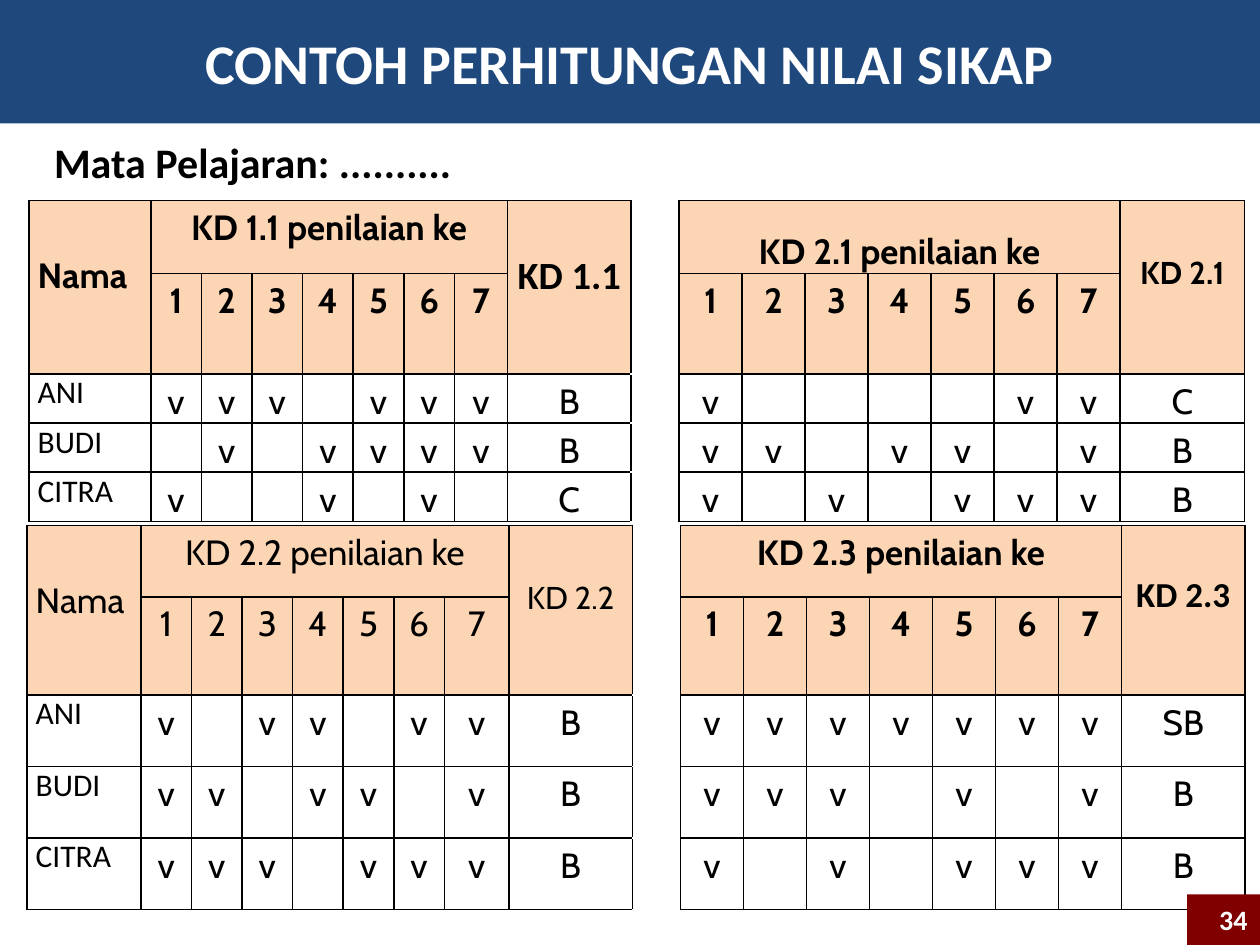
import dataclasses

import lxml.etree
import pptx
import pptx.dml.color
import pptx.enum.shapes
import pptx.enum.text
import pptx.oxml.ns
import pptx.util

Cm, Pt = pptx.util.Cm, pptx.util.Pt
ALIGN = pptx.enum.text.PP_ALIGN
MIDDLE = pptx.enum.text.MSO_ANCHOR.MIDDLE


@dataclasses.dataclass(frozen=True)
class Theme:
    banner: str = "1F497D"
    header: str = "FCD5B5"
    badge: str = "800000"
    ink: str = "000000"
    paper: str = "FFFFFF"
    sans: str = "Calibri"
    table_font: str = "Cabin"
    title: int = 32
    subtitle: int = 24
    large: int = 22
    body: int = 20
    name: int = 18
    page: int = 16


@dataclasses.dataclass
class Block:
    """One half of a table: headings, their styling, and a row per pupil."""
    code: str
    rows: list
    bold: bool = True
    heading_drop: float = 0
    code_drop: float = 0.97
    code_size: int = 18
    code_font: str = "Cabin"


def rgb(value):
    return pptx.dml.color.RGBColor.from_string(value)


class SlideBuilder:
    def __init__(self, slide, theme):
        self.s = slide
        self.theme = theme

    def add_run(self, tf, text, size, font=None, color=None, bold=False,
                align=ALIGN.LEFT, spacing=None):
        p = tf.paragraphs[0]
        p.alignment = align
        if spacing:
            p.line_spacing = spacing
        r = p.add_run()
        r.text = text
        r.font.size = Pt(size)
        r.font.name = font or self.theme.sans
        r.font.bold = bold
        r.font.color.rgb = rgb(color or self.theme.ink)

    def title(self, text, width, height):
        sp = self.s.shapes.title
        sp.left, sp.top, sp.width, sp.height = 0, 0, width, height
        sp.fill.solid()
        sp.fill.fore_color.rgb = rgb(self.theme.banner)
        sp.text_frame.vertical_anchor = MIDDLE
        self.add_run(sp.text_frame, text, self.theme.title,
                     color=self.theme.paper, bold=True, align=ALIGN.CENTER)

    def text(self, text, left, top, width, height):
        tf = self.s.shapes.add_textbox(left, top, width, height).text_frame
        tf.word_wrap = True
        self.add_run(tf, text, self.theme.subtitle, bold=True)

    def badge(self, text, left, top, width, height):
        sp = self.s.shapes.add_shape(
            pptx.enum.shapes.MSO_SHAPE.RECTANGLE, left, top, width, height)
        sp.shadow.inherit = False
        sp.fill.solid()
        sp.fill.fore_color.rgb = rgb(self.theme.badge)
        sp.line.fill.background()
        sp.text_frame.vertical_anchor = MIDDLE
        self.add_run(sp.text_frame, text, self.theme.page,
                     color=self.theme.paper, bold=True, align=ALIGN.RIGHT)

    def borders(self, cell, horizontal):
        tc_pr = cell._tc.get_or_add_tcPr()
        qn = pptx.oxml.ns.qn
        for side in "LRTB":
            ln = lxml.etree.SubElement(tc_pr, qn(f"a:ln{side}"), w=str(Pt(1)))
            fill = lxml.etree.SubElement(ln, qn("a:solidFill"))
            color = horizontal if side in "TB" else self.theme.ink
            lxml.etree.SubElement(fill, qn("a:srgbClr"), val=color)

    def cell(self, cell, text, size=None, font=None, bold=False,
             align=ALIGN.CENTER, spacing=1.15, drop=0):
        cell.margin_top = Cm(drop)
        self.add_run(cell.text_frame, text, size or self.theme.body,
                     font or self.theme.table_font, bold=bold, align=align,
                     spacing=spacing)

    def block(self, table, col, block):
        """Fill seven assessment columns and the result column from col."""
        result = col + 7
        table.cell(0, col).merge(table.cell(0, result - 1))
        table.cell(0, result).merge(table.cell(1, result))
        self.cell(table.cell(0, col), f"{block.code} penilaian ke",
                  bold=block.bold, drop=block.heading_drop)
        self.cell(table.cell(0, result), block.code, block.code_size,
                  block.code_font, block.bold, drop=block.code_drop)
        for i in range(7):
            self.cell(table.cell(1, col + i), str(i + 1), bold=block.bold)
        for row, (marks, grade) in enumerate(block.rows, 2):
            for i, mark in enumerate(marks):
                if mark == "v":
                    self.cell(table.cell(row, col + i), mark)
            self.cell(table.cell(row, result), grade)

    def score_table(self, left, top, cols, rows, names, first, second):
        gap = 9
        table = self.s.shapes.add_table(
            len(rows), len(cols), Cm(left), Cm(top),
            Cm(sum(cols)), Cm(sum(rows))).table
        table.first_row = table.horz_banding = False
        for column, width in zip(table.columns, cols):
            column.width = Cm(width)
        for row, height in zip(table.rows, rows):
            row.height = Cm(height)

        # Grid lines, fills and insets
        for r in range(len(rows)):
            for c in range(len(cols)):
                cell = table.cell(r, c)
                self.borders(cell, self.theme.paper if c == gap else self.theme.ink)
                cell.margin_left = cell.margin_right = Cm(0.18)
                cell.margin_top = cell.margin_bottom = 0
                if r < 2 and c != gap:
                    cell.fill.solid()
                    cell.fill.fore_color.rgb = rgb(self.theme.header)
                else:
                    cell.fill.background()

        # Name column, then the two blocks on either side of the gap
        for c in (0, gap):
            table.cell(0, c).merge(table.cell(1, c))
        self.cell(table.cell(0, 0), "Nama", bold=first.bold,
                  align=ALIGN.JUSTIFY, drop=0.97)
        for r, name in enumerate(names, 2):
            self.cell(table.cell(r, 0), name, self.theme.name, self.theme.sans,
                      align=ALIGN.LEFT, spacing=None)
        self.block(table, 1, first)
        self.block(table, gap + 1, second)


def main():
    theme = Theme()
    prs = pptx.Presentation()
    prs.slide_width, prs.slide_height = Cm(25.4), Cm(19.05)
    b = SlideBuilder(prs.slides.add_slide(prs.slide_layouts[5]), theme)
    names = ["ANI", "BUDI", "CITRA"]
    right_cols = [2.49, 0.97] + [1.27] * 7

    # Heading
    b.title("CONTOH PERHITUNGAN NILAI SIKAP", prs.slide_width, Cm(2.49))

    # Upper table
    b.score_table(
        0.58, 4.04, [2.46] + [1.02] * 6 + [1.07] + right_cols + [2.51],
        [1.47, 2.03] + [0.99] * 3, names,
        Block("KD 1.1", [("vvv-vvv", "B"), ("-v-vvvv", "B"), ("v--v-v-", "C")],
              code_drop=0.91, code_size=theme.large, code_font=theme.sans),
        Block("KD 2.1", [("v----vv", "C"), ("vv-vv-v", "B"), ("v-v-vvv", "B")],
              heading_drop=0.48))

    # Lower table
    b.score_table(
        0.54, 10.59, [2.3] + [1.02] * 6 + [1.3] + right_cols + [2.49],
        [1.44, 1.98] + [1.44] * 3, names,
        Block("KD 2.2", [("v-vv-vv", "B"), ("vv-vv-v", "B"), ("vvv-vvv", "B")],
              bold=False),
        Block("KD 2.3", [("vvvvvvv", "SB"), ("vvv-v-v", "B"), ("v-v-vvv", "B")],
              code_drop=0.85, code_size=theme.body, code_font=theme.sans))

    # Subject line and page number
    b.text("Mata Pelajaran: ..........", Cm(0.84), Cm(2.62), Cm(11.63), Cm(1.27))
    b.badge("34", Cm(23.93), Cm(18.03), Cm(1.47), Cm(1.02))

    prs.save("out.pptx")


if __name__ == "__main__":
    main()
